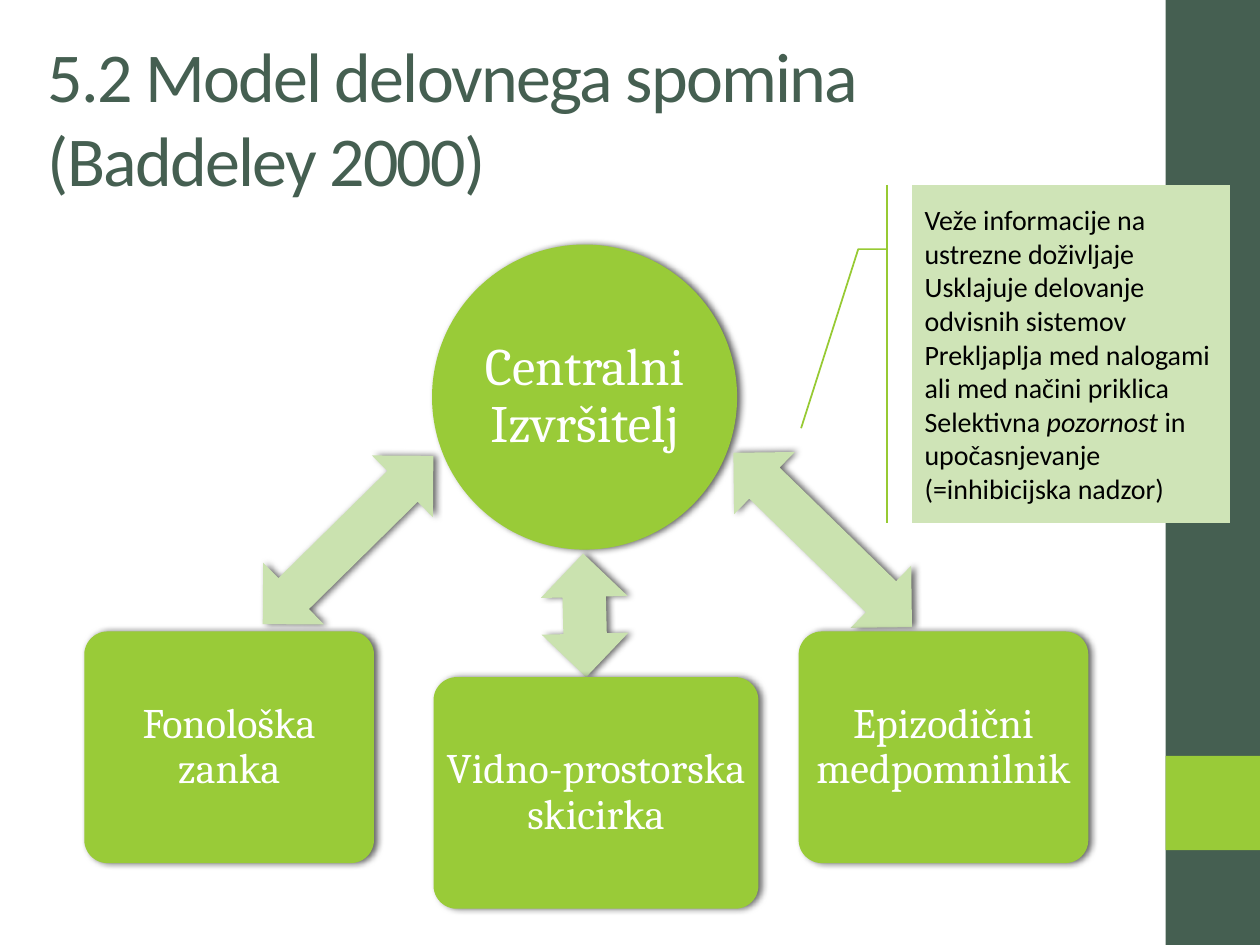
from dataclasses import dataclass

import pptx
import pptx.dml.color
import pptx.enum.shapes
import pptx.enum.text
import pptx.oxml
import pptx.oxml.ns
import pptx.util
from pptx.util import Cm

SHAPE = pptx.enum.shapes.MSO_SHAPE
ALIGN = pptx.enum.text.PP_ALIGN
ANCHOR = pptx.enum.text.MSO_ANCHOR

COLORS = {
    "dark": "455F51",
    "green": "99CB38",
    "arrow": "CAE2AF",
    "callout": "CFE4B7",
    "callout_line": "97CA33",
    "white": "FFFFFF",
    "black": "000000",
}
SHADOW = (
    f'<a:outerShdw {pptx.oxml.ns.nsdecls("a")} blurRad="50800" dist="25400" dir="0" '
    'rotWithShape="0"><a:srgbClr val="000000"><a:alpha val="60000"/></a:srgbClr></a:outerShdw>'
)


@dataclass
class Node:
    text: str
    left: float
    top: float
    width: float
    height: float
    kind: SHAPE = SHAPE.ROUNDED_RECTANGLE
    size: int = 24
    inset: float = 0.13


@dataclass
class Arrow:
    left: float
    top: float
    length: float
    rotation: float


BOX_TOP, BOX_W, BOX_H = 12.73, 5.84, 4.67
ARROW_TOP, ARROW_H = 10.01, 1.75

NODES = [
    Node("Centralni Izvršitelj", 8.71, 4.93, 6.15, 6.15, SHAPE.OVAL, 30, 0.05),
    Node("Fonološka zanka", 1.7, BOX_TOP, BOX_W, BOX_H),
    Node("Vidno-prostorska skicirka", 8.74, 13.65, 6.55, BOX_H),
    Node("Epizodični medpomnilnik", 16.1, BOX_TOP, BOX_W, BOX_H),
]
ARROWS = [
    Arrow(4.6, ARROW_TOP, 4.83, 135.4),
    Arrow(10.54, 11.53, 2.49, 88.6),
    Arrow(14.07, ARROW_TOP, 5.03, 44.3),
]
# Each paragraph is a list of (text, italic) runs
CALLOUT = [
    [("Veže informacije na ustrezne doživljaje", False)],
    [("Usklajuje delovanje odvisnih sistemov", False)],
    [("Prekljaplja med nalogami ali med načini priklica", False)],
    [("Selektivna ", False), ("pozornost", True),
     (" in upočasnjevanje (=inhibicijska nadzor)", False)],
]


def rgb(name: str) -> pptx.dml.color.RGBColor:
    return pptx.dml.color.RGBColor.from_string(COLORS[name])


def add_run(p, text: str, font: str, size: int, color: str, italic: bool = False):
    r = p.add_run()
    r.text = text
    r.font.name = font
    r.font.size = pptx.util.Pt(size)
    r.font.italic = italic
    r.font.color.rgb = rgb(color)
    return r


def add_filled(s, kind, left: float, top: float, width: float, height: float,
               fill: str, shadow: bool = False):
    sp = s.shapes.add_shape(kind, Cm(left), Cm(top), Cm(width), Cm(height))
    sp.fill.solid()
    sp.fill.fore_color.rgb = rgb(fill)
    sp.line.fill.background()
    sp.shadow.inherit = False
    if shadow:
        effects = sp._element.spPr.find(pptx.oxml.ns.qn("a:effectLst"))
        effects.append(pptx.oxml.parse_xml(SHADOW))
    return sp


def add_node(s, node: Node) -> None:
    sp = add_filled(s, node.kind, node.left, node.top, node.width, node.height, "green", True)
    if node.kind == SHAPE.ROUNDED_RECTANGLE:
        sp.adjustments[0] = 0.1
    tf = sp.text_frame
    tf.word_wrap = True
    tf.vertical_anchor = ANCHOR.MIDDLE
    tf.margin_left = tf.margin_right = tf.margin_top = tf.margin_bottom = Cm(node.inset)
    p = tf.paragraphs[0]
    p.alignment = ALIGN.CENTER
    p.line_spacing = 0.9
    add_run(p, node.text, "Cambria", node.size, "white")


def add_arrow(s, arrow: Arrow) -> None:
    sp = add_filled(s, SHAPE.LEFT_RIGHT_ARROW, arrow.left, arrow.top, arrow.length, ARROW_H,
                    "arrow", True)
    sp.rotation = arrow.rotation


def add_title(s) -> None:
    sp = s.shapes.title
    sp.left, sp.top, sp.width, sp.height = Cm(0.71), Cm(0.76), Cm(22.2), Cm(3.18)
    tf = sp.text_frame
    tf.auto_size = pptx.enum.text.MSO_AUTO_SIZE.NONE
    tf.vertical_anchor = ANCHOR.MIDDLE
    p = tf.paragraphs[0]
    p.alignment = ALIGN.LEFT
    for i, line in enumerate(["5.2 Model delovnega spomina", "(Baddeley 2000)"]):
        if i:
            p.add_line_break()
        r = add_run(p, line, "Calibri", 40, "dark")
        r._r.get_or_add_rPr().set("spc", "-100")


def add_callout(s) -> None:
    sp = add_filled(s, SHAPE.LINE_CALLOUT_2_ACCENT_BAR, 18.39, 3.73, 6.4, 6.81, "callout")
    sp.line.color.rgb = rgb("callout_line")
    sp.line.width = pptx.util.Pt(1)
    for i, value in enumerate([0.19, -0.08, 0.19, -0.17, 0.72, -0.35]):
        sp.adjustments[i] = value
    tf = sp.text_frame
    tf.word_wrap = True
    tf.vertical_anchor = ANCHOR.MIDDLE
    for i, runs in enumerate(CALLOUT):
        p = tf.add_paragraph() if i else tf.paragraphs[0]
        p.alignment = ALIGN.LEFT
        for text, italic in runs:
            add_run(p, text, "Calibri", 16, "black", italic)


def main() -> None:
    prs = pptx.Presentation()
    prs.slide_width, prs.slide_height = Cm(25.4), Cm(19.05)
    s = prs.slides.add_slide(prs.slide_layouts[5])

    # Sidebar
    add_filled(s, SHAPE.RECTANGLE, 23.5, 0, 1.9, 19.05, "dark")
    add_filled(s, SHAPE.RECTANGLE, 23.5, 15.24, 1.9, 1.9, "green")

    add_title(s)

    # Central executive, then each arrow with the system it leads to
    add_node(s, NODES[0])
    for arrow, node in zip(ARROWS, NODES[1:]):
        add_arrow(s, arrow)
        add_node(s, node)

    add_callout(s)
    prs.save("out.pptx")


if __name__ == "__main__":
    main()
